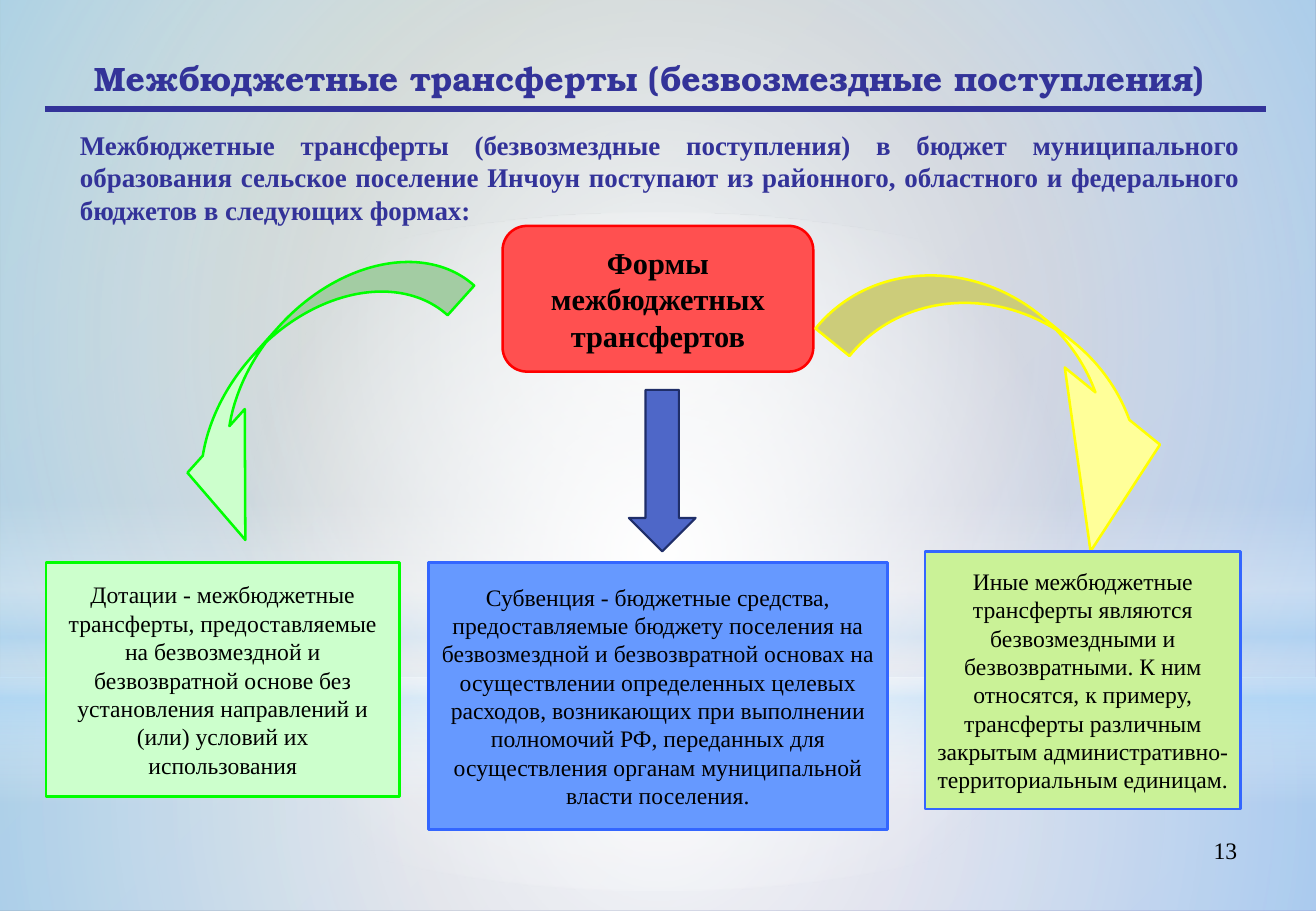
from dataclasses import dataclass

from pptx import Presentation, util as u
from pptx.dml.color import RGBColor
from pptx.enum import shapes, text
from pptx.oxml import parse_xml
from pptx.oxml.ns import nsdecls, qn

Pt = u.Pt
Kind = shapes.MSO_SHAPE
Align = text.PP_ALIGN
Anchor = text.MSO_ANCHOR

WIDE, HIGH = 780.48, 540
SERIF, SLAB = "Times New Roman", "TeX Gyre Bonum"
HUES = {
    "ink": "000000", "navy": "333399", "white": "FFFFFF", "sky": "B4DCFA",
    "sage": "96AB94", "lilac": "8488C4", "rose": "FF5050", "red": "FF0000",
    "mint": "CCFFCC", "green": "00FF00", "azure": "6699FF", "blue": "3366FF",
    "lemon": "FFFF99", "yellow": "FFFF00", "lime": "CAF297",
    "steel": "4E67C8", "dusk": "1F2E69",
}
Area = tuple[float, float, float, float]
Stops = tuple[tuple[int, str, int], ...]  # position %, colour, opacity %


@dataclass
class Glow:
    kind: Kind
    area: Area
    stops: Stops
    angle: int | None = None


@dataclass
class Form:
    kind: Kind
    area: Area
    fill: str
    edge: str
    width: float = 1.5
    turn: float = 0
    adjust: tuple[float, ...] = ()
    words: str = ""
    size: float = 14
    bold: bool = False
    inset: tuple[float, float] = (0, 0)


GLOWS = [
    Glow(Kind.RECTANGLE, (0, 401.76, WIDE, 138.24),
         ((0, "white", 91), (37, "white", 76), (100, "sky", 79))),
    Glow(Kind.RECTANGLE, (0, 0, WIDE, 401.76),
         ((0, "white", 89), (48, "white", 62), (100, "sky", 79))),
    Glow(Kind.RECTANGLE, (0, 296.64, WIDE, 180),
         ((0, "white", 0), (29, "white", 30), (45, "sky", 40),
          (55, "white", 26), (65, "sky", 60), (100, "white", 0)), 90),
    Glow(Kind.OVAL, (0, 126, WIDE, 401.76),
         ((0, "white", 100), (56, "white", 0))),
]

FORMS = [
    Form(Kind.ROUNDED_RECTANGLE, (298.08, 133.92, 184.32, 86.4), "rose", "red",
         adjust=(0.167,), words="Формы межбюджетных трансфертов",
         size=18, bold=True, inset=(10, 3.6)),
    Form(Kind.RECTANGLE, (27.36, 333.36, 209.52, 138.96), "mint", "green",
         words="Дотации - межбюджетные трансферты, предоставляемые на "
               "безвозмездной и безвозвратной основе без установления "
               "направлений и (или) условий их использования",
         inset=(8.64, 0)),
    Form(Kind.RECTANGLE, (254.16, 333.36, 272.16, 158.4), "azure", "blue",
         words="Субвенция - бюджетные средства, предоставляемые бюджету "
               "поселения на безвозмездной и безвозвратной основах на "
               "осуществлении определенных целевых расходов, возникающих при "
               "выполнении полномочий РФ, переданных для осуществления "
               "органам муниципальной власти поселения."),
    Form(Kind.CURVED_UP_ARROW, (64.8, 195.84, 228.24, 69.84), "mint", "green",
         turn=132, adjust=(0.338, 0.727, 0.747)),
    Form(Kind.CURVED_DOWN_ARROW, (484.56, 192.24, 246.24, 90), "lemon",
         "yellow", turn=39, adjust=(0.288, 0.807, 0.834)),
    Form(Kind.RECTANGLE, (548.64, 326.88, 187.2, 152.64), "lime", "blue",
         words="Иные межбюджетные трансферты являются безвозмездными и "
               "безвозвратными. К ним относятся, к примеру, трансферты "
               "различным закрытым административно-территориальным единицам."),
    Form(Kind.DOWN_ARROW, (372.96, 231.12, 39.6, 95.76), "steel", "dusk",
         width=1.25),
]


def tint(name: str) -> RGBColor:
    return RGBColor.from_string(HUES[name])


def place(area: Area) -> list[int]:
    return [Pt(n) for n in area]


def blend(fill, root, stops: Stops, angle: int | None) -> None:
    """Set a gradient: linear with an angle, round without one."""
    fill.gradient()
    grad = root.find(".//" + qn("a:gradFill"))
    marks = "".join(
        f'<a:gs pos="{spot * 1000}"><a:srgbClr val="{HUES[hue]}">'
        f'<a:alpha val="{alpha * 1000}"/></a:srgbClr></a:gs>'
        for spot, hue, alpha in stops)
    if angle is None:
        shade = ('<a:path path="circle"><a:fillToRect l="50000" t="50000" '
                 'r="50000" b="50000"/></a:path>')
    else:
        shade = f'<a:lin ang="{angle * 60000}" scaled="0"/>'
    grad.getparent().replace(grad, parse_xml(
        f'<a:gradFill {nsdecls("a")} rotWithShape="1">'
        f'<a:gsLst>{marks}</a:gsLst>{shade}</a:gradFill>'))


def style(run, size: float, hue: str, bold: bool, face: str) -> None:
    font = run.font
    font.size, font.bold, font.name = Pt(size), bold, face
    font.color.rgb = tint(hue)


def write(shape, words: str, *, size: float = 14, hue: str = "ink",
          bold: bool = False, face: str = SERIF, align=Align.CENTER,
          anchor=Anchor.MIDDLE, inset: tuple[float, float] = (7.2, 3.6)):
    frame = shape.text_frame
    frame.word_wrap = True
    frame.vertical_anchor = anchor
    frame.margin_left = frame.margin_right = Pt(inset[0])
    frame.margin_top = frame.margin_bottom = Pt(inset[1])
    para = frame.paragraphs[0]
    para.alignment = align
    run = para.add_run()
    run.text = words
    style(run, size, hue, bold, face)
    return para


def shine(slide, glow: Glow) -> None:
    shape = slide.shapes.add_shape(glow.kind, *place(glow.area))
    shape.shadow.inherit = False
    blend(shape.fill, shape.element.spPr, glow.stops, glow.angle)
    shape.line.fill.background()


def draw(slide, form: Form) -> None:
    shape = slide.shapes.add_shape(form.kind, *place(form.area))
    shape.shadow.inherit = False
    shape.rotation = form.turn
    for i, value in enumerate(form.adjust):
        shape.adjustments[i] = value
    shape.fill.solid()
    shape.fill.fore_color.rgb = tint(form.fill)
    shape.line.color.rgb = tint(form.edge)
    shape.line.width = Pt(form.width)
    if form.words:
        write(shape, form.words, size=form.size, bold=form.bold,
              inset=form.inset)


def rule(slide, left: float, right: float, top: float) -> None:
    line = slide.shapes.add_connector(
        shapes.MSO_CONNECTOR.STRAIGHT, *place((left, top, right, top)))
    line.line.color.rgb = tint("navy")
    line.line.width = Pt(3.75)
    line.element.spPr.append(parse_xml(f'<a:effectLst {nsdecls("a")}/>'))


def main() -> None:
    deck = Presentation()
    deck.slide_width, deck.slide_height = Pt(WIDE), Pt(HIGH)
    slide = deck.slides.add_slide(deck.slide_layouts[6])
    blend(slide.background.fill, slide.element,
          ((0, "sage", 100), (100, "lilac", 100)), 45)
    for glow in GLOWS:
        shine(slide, glow)

    box = slide.shapes.add_textbox
    write(box(*place((558.72, 491.76, 182.16, 37.44))), "13",
          align=Align.RIGHT, anchor=Anchor.TOP)
    title = write(box(*place((38.88, 14.4, 702, 48.24))),
                  "Межбюджетные трансферты (безвозмездные поступления)",
                  size=20, hue="navy", bold=True, face=SLAB, inset=(7.2, 0))
    space = title.add_run()
    space.text = " "
    style(space, 40, "navy", False, SERIF)
    write(box(*place((40.32, 72.72, 702, 43.92))),
          "Межбюджетные трансферты (безвозмездные поступления) в бюджет "
          "муниципального образования сельское поселение Инчоун поступают из "
          "районного, областного и федерального бюджетов в следующих формах:",
          size=16, hue="navy", bold=True, align=Align.JUSTIFY,
          anchor=Anchor.TOP)
    rule(slide, 26.64, 750.96, 64.8)
    for form in FORMS:
        draw(slide, form)
    deck.save("out.pptx")


if __name__ == "__main__":
    main()
